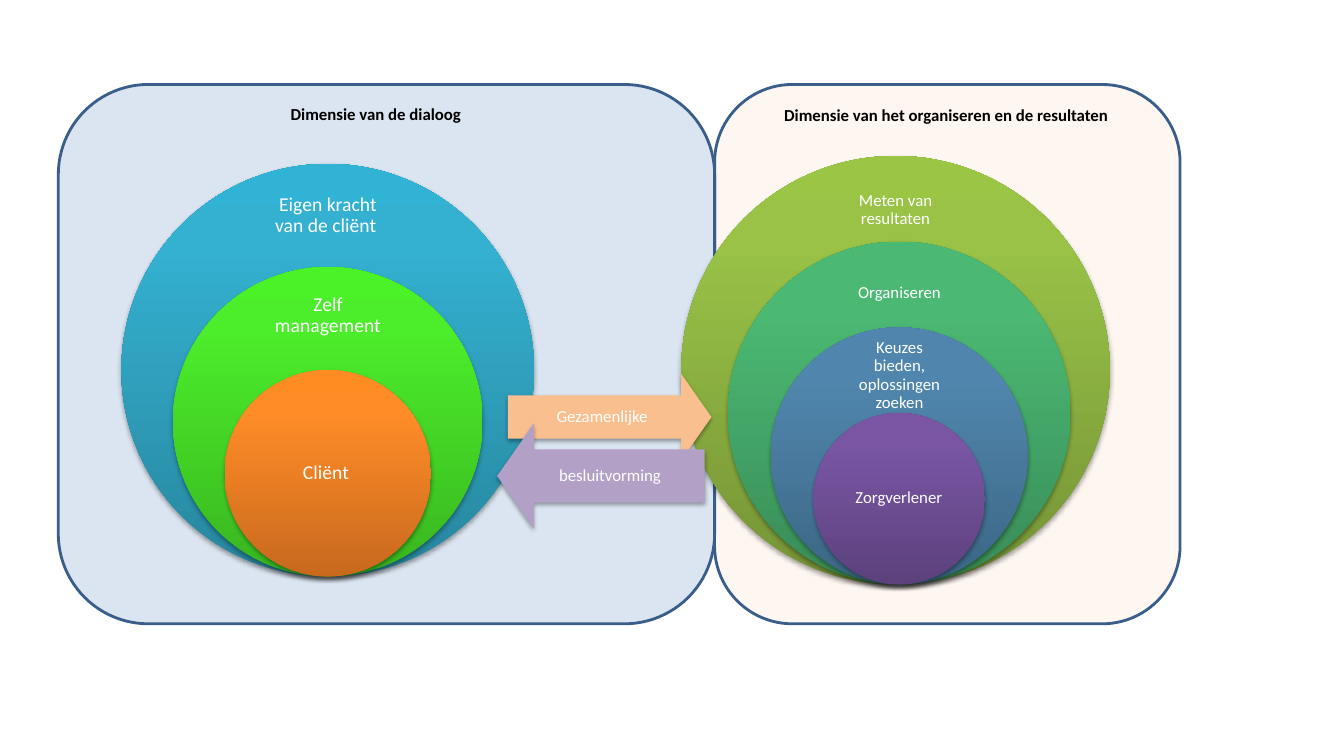
from copy import deepcopy
from lxml import etree
from pptx import Presentation
from pptx import util as u
from pptx.dml.color import RGBColor
from pptx.enum import shapes, text
from pptx.oxml.ns import qn

rgb = RGBColor.from_string
kinds = shapes.MSO_SHAPE

deck = Presentation()
deck.slide_width, deck.slide_height = u.Cm(33.87), u.Cm(19.05)
slide = deck.slides.add_slide(deck.slide_layouts[6])


def add_figure(kind, box, shadowed):
    figure = slide.shapes.add_shape(kind, *map(u.Cm, box))
    figure.shadow.inherit = False
    figure.line.fill.background()
    if shadowed:
        effects = figure._element.spPr.find(qn("a:effectLst"))
        shadow = etree.SubElement(effects, qn("a:outerShdw"), blurRad="40000", dist="23000",
                                  dir="5400000", rotWithShape="0")
        black = etree.SubElement(shadow, qn("a:srgbClr"), val="000000")
        etree.SubElement(black, qn("a:alpha"), val="35000")
    return figure


def add_label(wording, box, size, color="FFFFFF", inset=(0.23, 0.23), spacing=0.9,
              anchor=text.MSO_ANCHOR.MIDDLE, bold=False):
    frame = slide.shapes.add_textbox(*map(u.Cm, box)).text_frame
    frame.word_wrap = True
    frame.vertical_anchor = anchor
    frame.margin_left = frame.margin_right = u.Cm(inset[0])
    frame.margin_top = frame.margin_bottom = u.Cm(inset[1])
    paragraph = frame.paragraphs[0]
    paragraph.text = wording
    paragraph.alignment = text.PP_ALIGN.CENTER
    paragraph.line_spacing = spacing
    paragraph.font.name = "Calibri"
    paragraph.font.size = u.Pt(size)
    paragraph.font.bold = bold
    paragraph.font.color.rgb = rgb(color)


for left, width, color in [(18.01, 11.73, "FBD4B4"), (1.47, 16.54, "4F81BD")]:
    panel = add_figure(kinds.ROUNDED_RECTANGLE, (left, 2.13, width, 13.59), False)
    panel.adjustments[0] = 0.167
    panel.fill.solid()
    panel.fill.fore_color.rgb = rgb(color)
    tint = panel._element.spPr.find(qn("a:solidFill"))[0]
    etree.SubElement(tint, qn("a:alpha"), val="20000")
    panel.line.color.rgb = rgb("395E89")
    panel.line.width = u.Pt(2)

client_rings = [
    (8.26, "Eigen kracht van de cliënt ", (6.45, 4.65, 3.63, 1.55), ("27869E", "34B0D0", "30B3D4")),
    (8.26, "Zelf management", (6.45, 7.21, 3.63, 1.47), ("39B520", "4CED2B", "4AF228")),
    (8.26, "Cliënt ", (6.43, 10.64, 3.68, 2.59), ("C8691E", "FF8C27", "FF8B23")),
]
provider_rings = [
    (22.57, "Meten van resultaten", (21.06, 4.47, 3.02, 1.63), ("759336", "99C247", "9BC545")),
    (22.66, "Organiseren", (21.16, 6.6, 3.02, 1.55), ("398C57", "4BB873", "49BB72")),
    (22.66, "Keuzes bieden, oplossingen zoeken", (21.16, 8.74, 3.02, 1.45),
     ("3C6684", "5086AD", "4F88B0")),
    (22.66, "Zorgverlener", (21.13, 11.48, 3.05, 2.16), ("5C417C", "7955A4", "7955A6")),
]
for rings, bottom, step, size, inset in [(client_rings, 14.53, 2.6, 14, 0.28),
                                         (provider_rings, 14.73, 2.16, 12, 0.23)]:
    for index, (center, wording, box, colors) in enumerate(rings):
        diameter = step * (len(rings) + 1 - index)
        ring = add_figure(kinds.OVAL, (center - diameter / 2, bottom - diameter,
                                       diameter, diameter), True)
        ring.fill.gradient()
        ring.fill.gradient_angle = 90
        stops = ring._element.spPr.find(qn("a:gradFill")).find(qn("a:gsLst"))
        stops.insert(1, deepcopy(stops[0]))
        for stop, position, color in zip(ring.fill.gradient_stops, (0, 0.8, 1), colors):
            stop.position = position
            stop.color.rgb = rgb(color)
        add_label(wording, box, size, inset=(inset, inset))

for kind, arrow_box, color, wording, box in [
    (kinds.RIGHT_ARROW, (12.8, 9.42, 5.13, 2.18), "FABF8E", "Gezamenlijke",
     (12.8, 9.96, 4.75, 1.09)),
    (kinds.LEFT_ARROW, (12.53, 10.66, 5.23, 2.67), "B2A0C7", "besluitvorming",
     (13, 11.33, 4.75, 1.32)),
]:
    arrow = add_figure(kind, arrow_box, True)
    arrow.adjustments[0], arrow.adjustments[1] = 0.5, 0.35
    arrow.fill.solid()
    arrow.fill.fore_color.rgb = rgb(color)
    add_label(wording, box, 12)

for wording, box in [
    ("Dimensie van de dialoog", (3.61, 2.49, 11.73, 0.76)),
    ("Dimensie van het organiseren en de resultaten", (18.39, 2.51, 10.92, 0.76)),
]:
    add_label(wording, box, 12, "000000", (0.25, 0.13), 1.0, text.MSO_ANCHOR.TOP, True)

deck.save("out.pptx")
